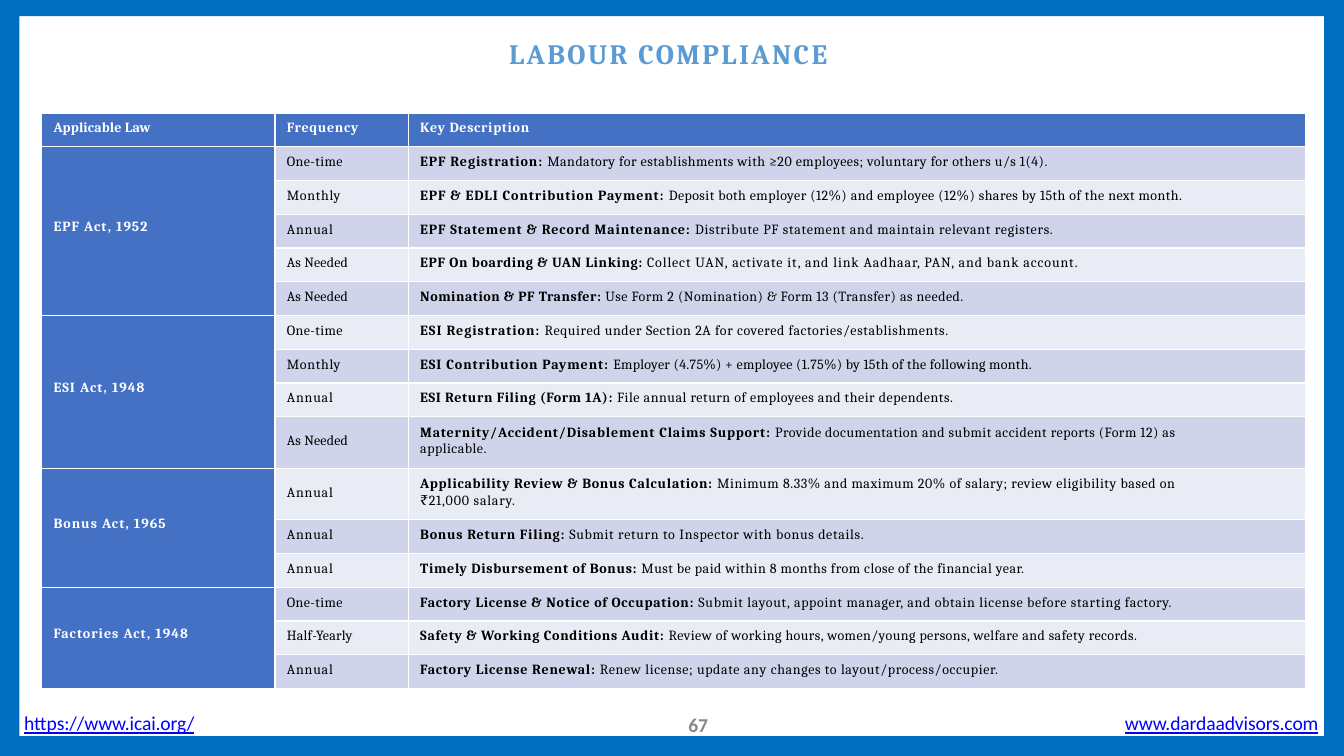
from pptx import Presentation
from pptx.dml.color import RGBColor
from pptx.enum.text import MSO_ANCHOR, MSO_AUTO_SIZE, PP_ALIGN
from pptx.util import Cm, Pt

TOP, MIDDLE = MSO_ANCHOR.TOP, MSO_ANCHOR.MIDDLE
NO_AUTOFIT = MSO_AUTO_SIZE.NONE
LEFT = PP_ALIGN.LEFT

FRAME_BLUE, LAW_BLUE = "006FC0", "4471C4"
BANDS = ["CFD4EA", "E9EBF5"]
WHITE, BLACK = "FFFFFF", "000000"


def color(value):
    return RGBColor.from_string(value)


def add_run(paragraph, text, size, ink, bold, spacing, font="Cambria"):
    run = paragraph.add_run()
    run.text = text
    run.font.name = font
    run.font.size = Pt(size)
    run.font.bold = bold
    run.font.color.rgb = color(ink)
    run._r.get_or_add_rPr().set("spc", str(round(spacing * 100)))
    return run


HEADINGS = [("Applicable Law", 0.1), ("Frequency", 0.5), ("Key Description", 0.5)]
FREQUENCY_SPACING = {"One-time": 0.3, "Monthly": 0.5, "Annual": 0.6,
                     "As Needed": 0.15, "Half-Yearly": 0.2}
# Each duty: frequency, label, label spacing, description, description spacing
LAWS = [
    ("EPF Act, 1952", [
        ("One-time", "EPF Registration: ", 0.65,
         "Mandatory for establishments with ≥20 employees; voluntary for others u/s 1(4).", 0.38),
        ("Monthly", "EPF & EDLI Contribution Payment: ", 0.65,
         "Deposit both employer (12%) and employee (12%) shares by 15th of the next month.", 0.35),
        ("Annual", "EPF Statement & Record Maintenance: ", 0.65,
         "Distribute PF statement and maintain relevant registers.", 0.5),
        ("As Needed", "EPF On boarding & UAN Linking: ", 0.48,
         "Collect UAN, activate it, and link Aadhaar, PAN, and bank account.", 0.66),
        ("As Needed", "Nomination & PF Transfer: ", 0.39,
         "Use Form 2 (Nomination) & Form 13 (Transfer) as needed.", 0.37),
    ]),
    ("ESI Act, 1948", [
        ("One-time", "ESI Registration: ", 0.71,
         "Required under Section 2A for covered factories/establishments.", 0.44),
        ("Monthly", "ESI Contribution Payment: ", 0.69,
         "Employer (4.75%) + employee (1.75%) by 15th of the following month.", 0.22),
        ("Annual", "ESI Return Filing (Form 1A): ", 0.45,
         "File annual return of employees and their dependents.", 0.39),
        ("As Needed", "Maternity/Accident/Disablement Claims Support: ", 0.6,
         "Provide documentation and submit accident reports (Form 12) as applicable.", 0.38),
    ]),
    ("Bonus Act, 1965", [
        ("Annual", "Applicability Review & Bonus Calculation: ", 0.55,
         "Minimum 8.33% and maximum 20% of salary; review eligibility based on", 0.42),
        ("Annual", "Bonus Return Filing: ", 0.57,
         "Submit return to Inspector with bonus details.", 0.51),
        ("Annual", "Timely Disbursement of Bonus: ", 0.5,
         "Must be paid within 8 months from close of the financial year.", 0.38),
    ]),
    ("Factories Act, 1948", [
        ("One-time", "Factory License & Notice of Occupation: ", 0.55,
         "Submit layout, appoint manager, and obtain license before starting factory.", 0.52),
        ("Half-Yearly", "Safety & Working Conditions Audit: ", 0.5,
         "Review of working hours, women/young persons, welfare and safety records.", 0.35),
        ("Annual", "Factory License Renewal: ", 0.57,
         "Renew license; update any changes to layout/process/occupier.", 0.48),
    ]),
]
TWO_LINE_ROWS = [9, 10]
BONUS_REVIEW_ROW = 10

prs = Presentation()
prs.slide_width, prs.slide_height = Cm(33.87), Cm(19.05)
slide = prs.slides.add_slide(prs.slide_layouts[5])

# Page frame
FRAME_OUTLINES = [
    [(33.37, 0), (33.87, 0), (33.87, 19.05), (33.37, 19.05)],
    [(0, 0), (33.8, 0), (33.8, 0.41), (0.49, 0.41), (0.49, 18.55),
     (33.63, 18.55), (33.63, 19.05), (0, 19.05)],
]
for outline in FRAME_OUTLINES:
    corners = [(Cm(x), Cm(y)) for x, y in outline]
    builder = slide.shapes.build_freeform(*corners[0])
    builder.add_line_segments(corners[1:], close=True)
    border = builder.convert_to_shape()
    border.shadow.inherit = False
    border.fill.solid()
    border.fill.fore_color.rgb = color(FRAME_BLUE)
    border.line.fill.background()

# Title
title = slide.shapes.title
title.left, title.top, title.width, title.height = Cm(3.63), Cm(0.64), Cm(25.35), Cm(1.93)
heading = title.text_frame
heading.auto_size = NO_AUTOFIT
heading.vertical_anchor = TOP
heading.margin_left, heading.margin_right = Cm(9.2), 0
heading.margin_top, heading.margin_bottom = Cm(0.28), 0
heading.paragraphs[0].alignment = LEFT
add_run(heading.paragraphs[0], "LABOUR COMPLIANCE", 20, "5B9BD4", True, 1.7)

# Footer
FOOTER = [
    ("https://www.icai.org/", 0.61, 18.01, 4.45, "0000FF", False),
    ("www.dardaadvisors.com", 28.35, 18.01, 5.03, "0000FF", False),
    ("67", 17.35, 18.06, 0.7, "888888", True),
]
for text, left, top, width, ink, bold in FOOTER:
    footer = slide.shapes.add_textbox(Cm(left), Cm(top), Cm(width), Cm(0.56)).text_frame
    footer.word_wrap = True
    footer.margin_left = footer.margin_right = footer.margin_top = footer.margin_bottom = 0
    footer.paragraphs[0].line_spacing = Pt(14.3)
    run = add_run(footer.paragraphs[0], text, 14, ink, bold, -0.1, "Calibri")
    run.font.underline = not bold

# Compliance table
row_count = 1 + sum(len(duties) for _, duties in LAWS)
table = slide.shapes.add_table(row_count, 3, Cm(1.05), Cm(2.85), Cm(31.84), Cm(14.5)).table
for column, width in zip(table.columns, [5.88, 3.36, 22.6]):
    column.width = Cm(width)
for index, row in enumerate(table.rows):
    row.height = Cm(1.3 if index in TWO_LINE_ROWS else 0.85)
    for column, cell in enumerate(row.cells):
        cell.margin_left = Cm(0.3)
        cell.margin_right = Cm(1.9 if column == 2 else 0)
        cell.margin_top, cell.margin_bottom = 0, Cm(0.08)
        cell.vertical_anchor = MIDDLE
        cell.fill.solid()
        in_blue = index == 0 or column == 0
        cell.fill.fore_color.rgb = color(LAW_BLUE if in_blue else BANDS[(index - 1) % 2])

for column, (text, spacing) in enumerate(HEADINGS):
    add_run(table.cell(0, column).text_frame.paragraphs[0], text, 10, WHITE, True, spacing)

first_row = 1
for law, duties in LAWS:
    law_cell = table.cell(first_row, 0)
    law_cell.merge(table.cell(first_row + len(duties) - 1, 0))
    law_cell.margin_bottom = Cm(0.2)
    add_run(law_cell.text_frame.paragraphs[0], law, 10, WHITE, True, 0.75)
    for index, duty in enumerate(duties, first_row):
        frequency, label, label_spacing, description, spacing = duty
        add_run(table.cell(index, 1).text_frame.paragraphs[0], frequency, 10, BLACK, False,
                FREQUENCY_SPACING[frequency])
        details = table.cell(index, 2).text_frame.paragraphs[0]
        add_run(details, label, 10, BLACK, True, label_spacing)
        add_run(details, description, 10, BLACK, False, spacing)
    first_row += len(duties)

salary_limit = table.cell(BONUS_REVIEW_ROW, 2).text_frame.add_paragraph()
salary_limit.space_before = Pt(0.8)
add_run(salary_limit, "₹", 10, BLACK, False, 0.6, "Times New Roman")
add_run(salary_limit, "21,000 salary.", 10, BLACK, False, 0.6)

prs.save("out.pptx")
